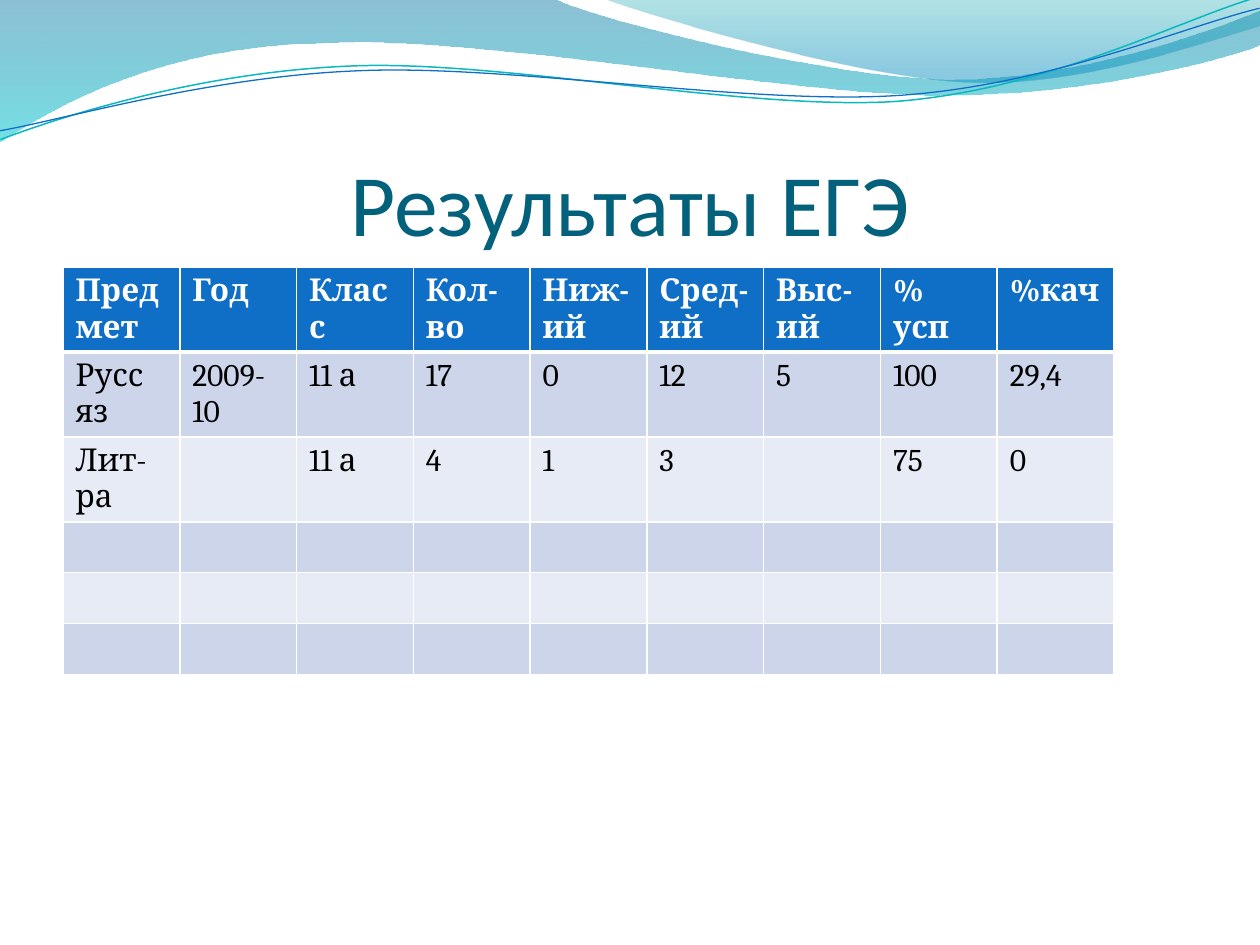
from dataclasses import dataclass

from lxml.etree import SubElement
from pptx import Presentation
from pptx.dml.color import RGBColor
from pptx.enum.text import MSO_ANCHOR, PP_ALIGN
from pptx.oxml.ns import qn
from pptx.util import Pt

EMU_PER_PX = 914400 / 126


@dataclass(frozen=True)
class Theme:
    title_font: str = "Calibri"
    table_font: str = "Cambria"
    title_size: int = 50
    table_size: int = 18
    title: str = "04617B"
    header: str = "0F6FC6"
    header_text: str = "FFFFFF"
    body_text: str = "000000"
    border: str = "FFFFFF"
    bands: tuple = ("CCD5EA", "E7EBF5")
    # Gradient stops: position, colour, opacity in percent
    wide_wave: tuple = ((0, "0074A1", 45), (1, "00C6CF", 55))
    right_wave: tuple = ((0, "00A1A9", 30), (0.8, "008BBF", 45))
    teal_line: str = "0AB8BF"
    blue_line: str = "0F6FC6"


THEME = Theme()
LINE_TILT = 357.3

# Outlines in px: two numbers are a straight step, six are a Bezier curve
WIDE_WAVE = [
    (0, 0), (554, -1),
    (600, 21, 837, 79, 955, 79), (1075, 79, 1207, 33, 1260, 11),
    (1261, 45),
    (1239, 55, 1096, 96, 940, 95), (784, 95, 481, 35, 324, 43),
    (163, 45, 58, 105, -1, 142),
]
RIGHT_WAVE = [
    (604, -1),
    (641, 14, 859, 78, 969, 82), (1079, 87, 1211, 40, 1260, 26),
    (1260, 0),
]
# The two lines are given level, before their tilt
TEAL_LINE = [
    (-2, 110),
    (59, 90, 199, 52, 350, 53), (499, 53, 745, 117, 896, 114),
    (1049, 109, 1184, 45, 1260, 27),
]
BLUE_LINE = [
    (-2, 101),
    (57, 94, 207, 57, 357, 58), (509, 58, 750, 112, 902, 108),
    (1052, 104, 1188, 52, 1262, 38),
]

RESULTS = [
    ["Предмет", "Год", "Класс", "Кол-во", "Ниж-ий", "Сред-ий", "Выс-ий", "% усп", "%кач"],
    ["Русс яз", "2009-10", "11 а", "17", "0", "12", "5", "100", "29,4"],
    ["Лит-ра", "", "11 а", "4", "1", "3", "", "75", "0"],
    *([""] * 9 for _ in range(3)),
]


def px(length):
    return round(length * EMU_PER_PX)


def rgb(code):
    return RGBColor.from_string(code)


def style_font(font, name, size, color, bold=False):
    font.name = name
    font.size = Pt(size)
    font.bold = bold
    font.color.rgb = rgb(color)


def add_outline(slide, segments, close):
    points = [(px(s[i]), px(s[i + 1])) for s in segments for i in range(0, len(s), 2)]
    builder = slide.shapes.build_freeform(*points[0])
    builder.add_line_segments(points[1:], close=close)
    outline = builder.convert_to_shape()
    outline.shadow.inherit = False
    # Join the three steps of each curve into one Bezier
    steps = iter(list(outline._element.iter(qn("a:lnTo"))))
    for segment in segments[1:]:
        step = next(steps)
        if len(segment) == 6:
            step.tag = qn("a:cubicBezTo")
            for _ in range(2):
                control = next(steps)
                step.append(control[0])
                control.getparent().remove(control)
    return outline


def add_wave(slide, segments, stops):
    wave = add_outline(slide, segments, close=True)
    wave.line.fill.background()
    wave.fill.gradient()
    wave.fill.gradient_angle = 270
    for stop, (position, color, _) in zip(wave.fill.gradient_stops, stops):
        stop.position = position
        stop.color.rgb = rgb(color)
    # Opacity of each stop
    for tint, (_, _, opacity) in zip(wave._element.spPr.iter(qn("a:srgbClr")), stops):
        SubElement(tint, qn("a:alpha")).set("val", str(opacity * 1000))


def add_wave_line(slide, segments, color, width):
    wave_line = add_outline(slide, segments, close=False)
    wave_line.rotation = LINE_TILT
    wave_line.fill.background()
    wave_line.line.color.rgb = rgb(color)
    wave_line.line.width = Pt(width)


def add_title(slide, text):
    frame = slide.shapes.add_textbox(px(63), px(97), px(1134), px(157)).text_frame
    frame.word_wrap = True
    frame.vertical_anchor = MSO_ANCHOR.BOTTOM
    frame.margin_left = frame.margin_right = frame.margin_bottom = 0
    frame.margin_top = px(6)
    heading = frame.paragraphs[0]
    heading.text = text
    heading.alignment = PP_ALIGN.CENTER
    style_font(heading.font, THEME.title_font, THEME.title_size, THEME.title)


def set_borders(cell, top, bottom):
    properties = cell._tc.get_or_add_tcPr()
    for side, width in (("L", 1), ("R", 1), ("T", top), ("B", bottom)):
        border = SubElement(properties, qn(f"a:ln{side}"), w=str(Pt(width)))
        fill = SubElement(border, qn("a:solidFill"))
        SubElement(fill, qn("a:srgbClr"), val=THEME.border)


def add_results_table(slide, rows):
    table = slide.shapes.add_table(
        len(rows), len(rows[0]), px(63), px(267), px(1051), px(51 * len(rows))
    ).table
    for row_number, values in enumerate(rows):
        is_header = row_number == 0
        background = THEME.header if is_header else THEME.bands[(row_number - 1) % 2]
        color = THEME.header_text if is_header else THEME.body_text
        for column, value in enumerate(values):
            cell = table.cell(row_number, column)
            # A thicker rule parts the header from the body
            set_borders(cell, 3 if row_number == 1 else 1, 3 if is_header else 1)
            cell.fill.solid()
            cell.fill.fore_color.rgb = rgb(background)
            cell.margin_bottom = px(3)
            entry = cell.text_frame.paragraphs[0]
            entry.text = value
            style_font(entry.font, THEME.table_font, THEME.table_size, color, is_header)


def main():
    deck = Presentation()
    deck.slide_width, deck.slide_height = px(1260), px(945)
    slide = deck.slides.add_slide(deck.slide_layouts[6])

    # Waves along the top
    add_wave(slide, WIDE_WAVE, THEME.wide_wave)
    add_wave(slide, RIGHT_WAVE, THEME.right_wave)
    add_wave_line(slide, TEAL_LINE, THEME.teal_line, 0.85)
    add_wave_line(slide, BLUE_LINE, THEME.blue_line, 0.75)

    # Exam results
    add_title(slide, "Результаты ЕГЭ")
    add_results_table(slide, RESULTS)

    deck.save("out.pptx")


if __name__ == "__main__":
    main()
